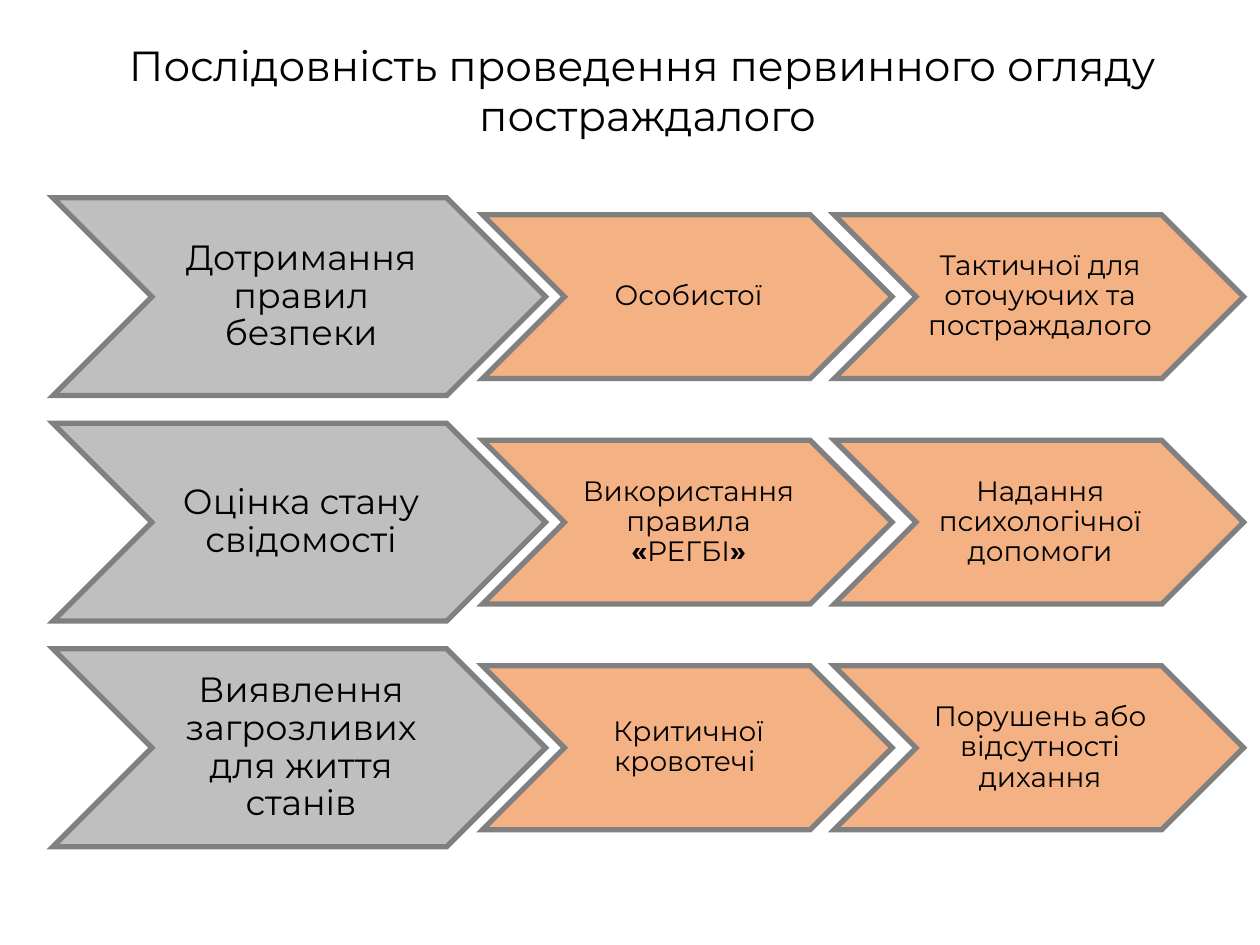
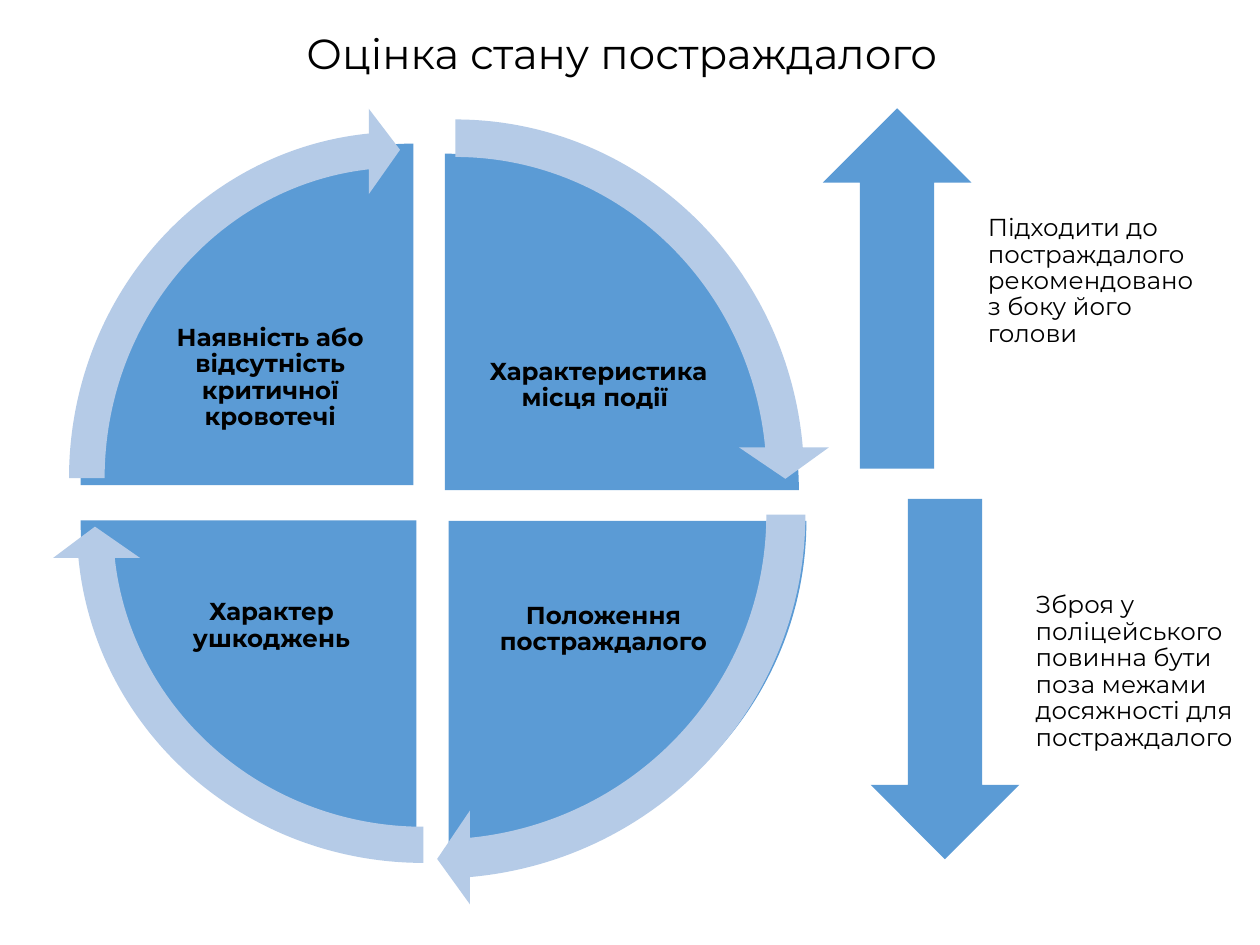
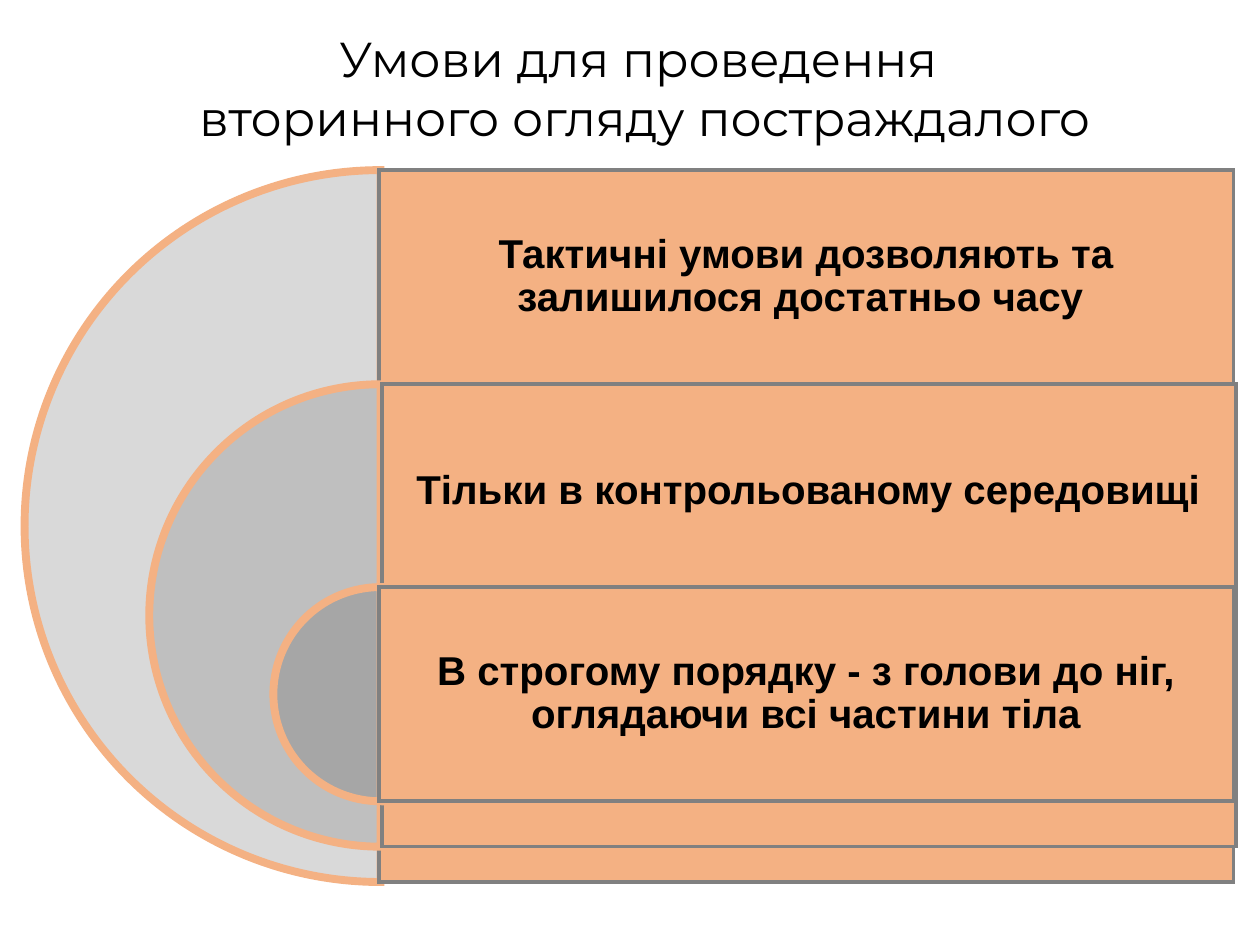
from lxml.etree import SubElement
from pptx import Presentation
from pptx.dml.color import RGBColor
from pptx.enum.shapes import MSO_SHAPE as Shape
from pptx.enum.text import MSO_ANCHOR as Anchor, MSO_AUTO_SIZE as AutoSize, PP_ALIGN as Align
from pptx.oxml.ns import qn
from pptx.util import Inches, Pt

COLORS = {
    "text": "000000",
    "gray": "BFBFBF",
    "light_gray": "D9D9D9",
    "dark_gray": "A6A6A6",
    "outline": "808080",
    "orange": "F4B183",
    "blue": "5B9BD5",
    "pale_blue": "B5CBE7",
}
FONT = "Montserrat"
TITLE_ONLY = 5
# Pie and arrow angles, in the units of shape.adjustments
EAST, SOUTH, WEST, NORTH = 0, 54, 108, 162


def color(name):
    return RGBColor.from_string(COLORS[name])


def add_run(paragraph, text, size, bold=False, font=FONT):
    run = paragraph.add_run()
    run.text = text
    run.font.name = font
    run.font.size = Pt(size)
    run.font.bold = bold
    run.font.color.rgb = color("text")


def write(shape, runs, size, bold=False, font=FONT, align=Align.CENTER, insets=(0.02, 0.02, 0.02, 0.02)):
    """Fill a shape with one paragraph; runs is a text or a list of (text, bold)."""
    frame = shape.text_frame
    frame.word_wrap = True
    frame.vertical_anchor = Anchor.MIDDLE
    frame.margin_left, frame.margin_top, frame.margin_right, frame.margin_bottom = map(Inches, insets)
    paragraph = frame.paragraphs[0]
    paragraph.alignment = align
    paragraph.line_spacing = 0.9
    for text, run_bold in [(runs, bold)] if isinstance(runs, str) else runs:
        add_run(paragraph, text, size, run_bold, font)


def add_figure(slide, kind, box, fill, outline=None, width=0, adjustments=()):
    shape = slide.shapes.add_shape(kind, *map(Inches, box))
    shape.shadow.inherit = False
    for index, value in enumerate(adjustments):
        shape.adjustments[index] = value
    shape.fill.solid()
    shape.fill.fore_color.rgb = color(fill)
    if outline:
        shape.line.color.rgb = color(outline)
        shape.line.width = Pt(width)
        # Sharp corners
        SubElement(shape.line._get_or_add_ln(), qn("a:miter"), lim="800000")
    else:
        shape.line.fill.background()
    return shape


def add_label(slide, box, text, **style):
    label = slide.shapes.add_textbox(*map(Inches, box))
    write(label, text, 14, **style)


def add_titled_slide(presentation, box, lines, size=24):
    slide = presentation.slides.add_slide(presentation.slide_layouts[TITLE_ONLY])
    title = slide.shapes.title
    title.left, title.top, title.width, title.height = map(Inches, box)
    frame = title.text_frame
    frame.auto_size = AutoSize.NONE
    frame.word_wrap = False
    frame.vertical_anchor = Anchor.TOP
    for index, line in enumerate(lines):
        paragraph = frame.add_paragraph() if index else frame.paragraphs[0]
        paragraph.alignment = Align.CENTER
        paragraph.space_before = Pt(0)
        add_run(paragraph, line, size)
    return slide


# Slide 1: rows of chevrons
def add_chevron_row(slide, left, top, step, details):
    height, detail_height = 1.57, 1.3
    lead = add_figure(slide, Shape.CHEVRON, (left, top, 3.91, height), "gray", "outline", 3)
    write(lead, step, 20, insets=(0.03, 0.01, 0, 0.01))
    detail_top = top + (height - detail_height) / 2
    for index, detail in enumerate(details):
        box = (left + 3.41 + index * 2.79, detail_top, 3.25, detail_height)
        chevron = add_figure(slide, Shape.CHEVRON, box, "orange", "outline", 3)
        write(chevron, detail, 16, insets=(0.02, 0.01, 0, 0.01))


def build_sequence_slide(presentation):
    slide = add_titled_slide(presentation, (0.6, 0.26, 9.08, 0.91),
                             ["Послідовність проведення первинного огляду ", "постраждалого"])
    rows = [
        ("Дотримання правил безпеки",
         ["Особистої", "Тактичної для оточуючих та постраждалого"]),
        ("Оцінка стану свідомості",
         [[("Використання правила ", False), ("«", True), ("РЕГБІ", False), ("»", True)],
          "Надання психологічної допомоги"]),
        ("Виявлення загрозливих для життя станів",
         ["Критичної кровотечі ", "Порушень або відсутності дихання"]),
    ]
    for index, (step, details) in enumerate(rows):
        add_chevron_row(slide, 0.42, 1.57 + index * 1.79, step, details)


# Slide 2: cycle of quarters and two arrows with notes
def add_cycle(slide, left, top):
    def place(box):
        return (left + box[0], top + box[1], box[2], box[3])

    # Quarter box, start and end angle, label box, label
    quarters = [
        ((0.39, 0.48, 5.62, 5.34), NORTH, EAST, (3.38, 1.59, 2.08, 1.46), "Характеристика місця події "),
        ((0.39, 0.64, 5.68, 5.51), EAST, SOUTH, (3.41, 3.5, 2.1, 1.51), "Положення постраждалого"),
        ((0.31, 0.69, 5.33, 5.4), SOUTH, WEST, (0.84, 3.49, 1.97, 1.48), "Характер ушкоджень"),
        ((0.31, 0.4, 5.28, 5.42), WEST, NORTH, (0.84, 1.52, 1.95, 1.48),
         "Наявність або відсутність критичної кровотечі"),
    ]
    for box, start, end, label_box, text in quarters:
        add_figure(slide, Shape.PIE, place(box), "blue", adjustments=(start, end))
        add_label(slide, place(label_box), text, bold=True)

    # Arrow box, angle of the head, angle of the tail
    arrows = [
        ((0.31, 0, 5.95, 6.12), 212.72, NORTH),
        ((0, 0.24, 6.28, 6.21), 50.72, EAST),
        ((0.08, 0.57, 5.9, 5.74), 104.72, SOUTH),
        ((0.02, 0.11, 5.65, 5.89), 158.72, WEST),
    ]
    for box, head, tail in arrows:
        add_figure(slide, Shape.CIRCULAR_ARROW, place(box), "pale_blue",
                   adjustments=(0.05, 3.28, head, tail, 0.06))


def add_arrow_note(slide, kind, left, top, text):
    width, height = 1.18, 2.86
    add_figure(slide, kind, (left, top, width, height), "blue")
    add_label(slide, (left + width + 0.02, top, 1.88, height), text,
              align=Align.LEFT, insets=(0.11, 0, 0, 0.11))


def build_assessment_slide(presentation):
    slide = add_titled_slide(presentation, (2.08, 0.17, 5.71, 0.5), ["Оцінка стану постраждалого"])
    add_cycle(slide, 0.33, 0.74)
    add_arrow_note(slide, Shape.UP_ARROW, 6.53, 0.86,
                   "Підходити до постраждалого рекомендовано з боку його голови")
    add_arrow_note(slide, Shape.DOWN_ARROW, 6.91, 3.96,
                   "Зброя у поліцейського повинна бути поза межами досяжності для постраждалого")


# Slide 3: nested half circles, each with a panel
def add_condition(slide, center, top, diameter, fill, panel_left, text):
    add_figure(slide, Shape.PIE, (center - diameter / 2, top, diameter, diameter),
               fill, "orange", 4.5, (SOUTH, NORTH))
    panel = add_figure(slide, Shape.RECTANGLE, (panel_left, top, 6.78, diameter), "orange", "outline", 2)
    # The text stays in the upper band that the next panel leaves free
    band_height, inset = 1.7, 0.1
    write(panel, text, 23, bold=True, font="Arial",
          insets=(inset, inset, inset, diameter - band_height + inset))


def build_conditions_slide(presentation):
    slide = add_titled_slide(presentation, (1.18, 0.18, 7.87, 1.04),
                             ["Умови для проведення ", "вторинного огляду постраждалого"], 28)
    conditions = [
        (1.35, 5.65, "light_gray", 3.01, "Тактичні умови дозволяють та залишилося достатньо часу "),
        (3.05, 3.67, "gray", 3.03, "Тільки в контрольованому середовищі"),
        (4.66, 1.7, "dark_gray", 3.01, "В строгому порядку - з голови до ніг, оглядаючи всі частини тіла"),
    ]
    for condition in conditions:
        add_condition(slide, 3.02, *condition)


def main():
    presentation = Presentation()
    presentation.slide_width = Inches(10)
    presentation.slide_height = Inches(7.5)
    build_sequence_slide(presentation)
    build_assessment_slide(presentation)
    build_conditions_slide(presentation)
    presentation.save("out.pptx")


if __name__ == "__main__":
    main()
